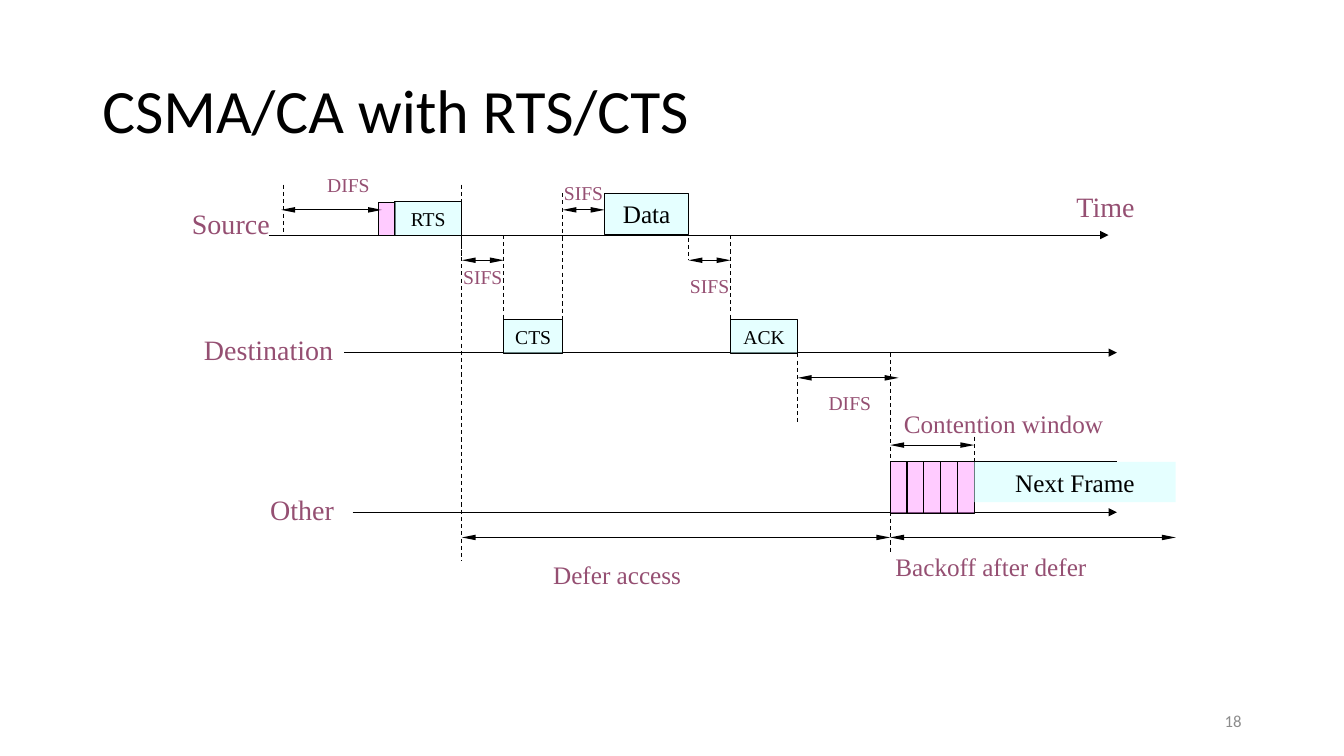
from dataclasses import dataclass

from lxml import etree
from pptx import Presentation
from pptx import util as u
from pptx.dml.color import RGBColor
from pptx.enum import dml, shapes, text
from pptx.oxml.ns import qn


@dataclass(frozen=True)
class Theme:
    ink: str = "000000"
    label: str = "954F72"
    muted: str = "8C8C8C"
    frame: str = "CCFFFF"
    slot: str = "FF99FF"
    heading_font: str = "Calibri"
    diagram_font: str = "Times New Roman"
    title: int = 44
    station: int = 20
    caption: int = 18
    interval: int = 14
    footer: int = 12
    line: float = 0.75


THEME = Theme()
STEP = 2.54 / 12  # diagram grid, in centimetres


@dataclass(frozen=True)
class Box:
    left: float
    top: float
    width: float
    height: float

    def emu(self):
        return [u.Cm(v) for v in (self.left, self.top, self.width, self.height)]

    def cell(self, x, y, width, height):
        """A part of this box, given in grid steps."""
        return Box(self.left + x * STEP, self.top + y * STEP, width * STEP, height * STEP)


def write(shape, words, size, color, font, align, anchor):
    frame = shape.text_frame
    frame.word_wrap = True
    frame.vertical_anchor = anchor
    paragraph = frame.paragraphs[0]
    paragraph.alignment = align
    run = paragraph.add_run()
    run.text = words
    run.font.size = u.Pt(size)
    run.font.name = font
    run.font.color.rgb = RGBColor.from_string(color)
    return paragraph


def add_text(slide, box, words, size, color=THEME.label, font=THEME.diagram_font,
             align=text.PP_ALIGN.CENTER, anchor=text.MSO_ANCHOR.TOP):
    shape = slide.shapes.add_textbox(*box.emu())
    return write(shape, words, size, color, font, align, anchor)


def add_block(slide, box, color, words="", size=THEME.interval, outlined=True):
    shape = slide.shapes.add_shape(shapes.MSO_SHAPE.RECTANGLE, *box.emu())
    shape.shadow.inherit = False
    shape.fill.solid()
    shape.fill.fore_color.rgb = RGBColor.from_string(color)
    tint = shape.fill._xPr.find(qn("a:solidFill"))[0]
    etree.SubElement(tint, qn("a:alpha"), val="50000")
    if outlined:
        shape.line.color.rgb = RGBColor.from_string(THEME.ink)
        shape.line.width = u.Pt(THEME.line)
    else:
        shape.line.fill.background()
    if words:
        write(shape, words, size, THEME.ink, THEME.diagram_font,
              text.PP_ALIGN.CENTER, text.MSO_ANCHOR.MIDDLE)


def add_line(slide, box, start, end, dashed=False, heads=(), width="med", length="med"):
    points = [u.Cm(v) for x, y in (start, end)
              for v in (box.left + x * STEP, box.top + y * STEP)]
    connector = slide.shapes.add_connector(shapes.MSO_CONNECTOR.STRAIGHT, *points)
    connector.line.color.rgb = RGBColor.from_string(THEME.ink)
    connector.line.width = u.Pt(THEME.line)
    if dashed:
        connector.line.dash_style = dml.MSO_LINE.DASH
    properties = connector.line._get_or_add_ln()
    for head in heads:
        etree.SubElement(properties, qn(f"a:{head}"), type="triangle", w=width, len=length)
    etree.SubElement(connector._element.spPr, qn("a:effectLst"))


def add_title(slide, box):
    paragraph = add_text(slide, box, "CSMA/CA with RTS/CTS", THEME.title, THEME.ink,
                         THEME.heading_font, text.PP_ALIGN.LEFT, text.MSO_ANCHOR.MIDDLE)
    paragraph.line_spacing = 0.9


def add_page_number(slide, box):
    add_text(slide, box, "18", THEME.footer, THEME.muted, THEME.heading_font,
             text.PP_ALIGN.RIGHT, text.MSO_ANCHOR.MIDDLE)


def add_axes(slide, box):
    # Time axes of source, destination and other stations: start, end, height
    for start, end, y in ((12, 112, 8), (21, 113, 22), (22, 113, 41)):
        add_line(slide, box, (start, y), (end, y), heads=("tailEnd",))
    # Dashed markers: position, top, bottom
    for x, top, bottom in ((13.75, 2, 8), (35, 2, 46.75), (35, 4, 11), (40, 8, 22),
                           (47, 3, 22), (62, 4, 11), (67, 8, 22), (75, 19.5, 30.5),
                           (86, 22, 46), (96, 32, 37)):
        add_line(slide, box, (x, top), (x, bottom), dashed=True)
    # Interval arrows: start, end, height
    for start, end, y in ((13.5, 25.5, 5), (35, 40, 11), (47, 52, 5), (62, 67, 11),
                          (75, 87, 25), (86, 96, 33), (35, 86, 44), (86, 120, 44)):
        add_line(slide, box, (start, y), (end, y), heads=("headEnd", "tailEnd"),
                 width="sm", length="lg")


def add_frames(slide, box):
    # Backoff slots
    add_block(slide, box.cell(25.1, 4.1, 2, 4), THEME.slot)
    for index in range(5):
        add_block(slide, box.cell(86 + 2 * index, 35, 2, 6.1), THEME.slot)
    # Transmitted frames
    for words, x, y, width, height, size in (
            ("RTS", 27, 4, 8, 4.1, THEME.interval),
            ("CTS", 40, 18, 7, 4.1, THEME.interval),
            ("Data", 52, 3, 10, 4.9, THEME.caption),
            ("ACK", 67, 18, 8, 4.1, THEME.interval)):
        add_block(slide, box.cell(x, y, width, height), THEME.frame, words, size)
    # The next frame is open-ended, with a top edge only
    add_block(slide, box.cell(96, 35, 24, 4.8), THEME.frame, "Next Frame",
              THEME.caption, outlined=False)
    add_line(slide, box, (91, 35), (113, 35))


def add_labels(slide, box):
    left, center = text.PP_ALIGN.LEFT, text.PP_ALIGN.CENTER
    for words, x, y, width, size, align in (
            ("Source", 1.5, 4, 12, THEME.station, center),
            ("Destination", 3, 19, 18, THEME.station, center),
            ("Other", 11, 38, 11, THEME.station, left),
            ("Time", 107, 2, 10, THEME.station, left),
            ("DIFS", 17.5, 0, 8, THEME.interval, center),
            ("SIFS", 32, 11, 11, THEME.interval, center),
            ("SIFS", 44, 1, 11, THEME.interval, center),
            ("SIFS", 60, 12, 9, THEME.interval, center),
            ("DIFS", 76.7, 26, 9, THEME.interval, center),
            ("Contention window", 86, 28, 27, THEME.caption, center),
            ("Defer access", 38, 46, 31, THEME.caption, center),
            ("Backoff after defer", 84, 45, 28, THEME.caption, center)):
        add_text(slide, box.cell(x, y, width, size * 0.26), words, size, align=align)


def add_timing_diagram(slide, box):
    add_axes(slide, box)
    add_frames(slide, box)
    add_labels(slide, box)


def main():
    presentation = Presentation()
    presentation.slide_width = u.Cm(33.87)
    presentation.slide_height = u.Cm(19.05)
    slide = presentation.slides.add_slide(presentation.slide_layouts[6])
    add_title(slide, Box(2.33, 1.01, 29.21, 3.68))
    add_timing_diagram(slide, Box(4.23, 4.23, 25.4, 10.8))
    add_page_number(slide, Box(23.92, 17.66, 7.62, 1.01))
    presentation.save("out.pptx")


if __name__ == "__main__":
    main()
